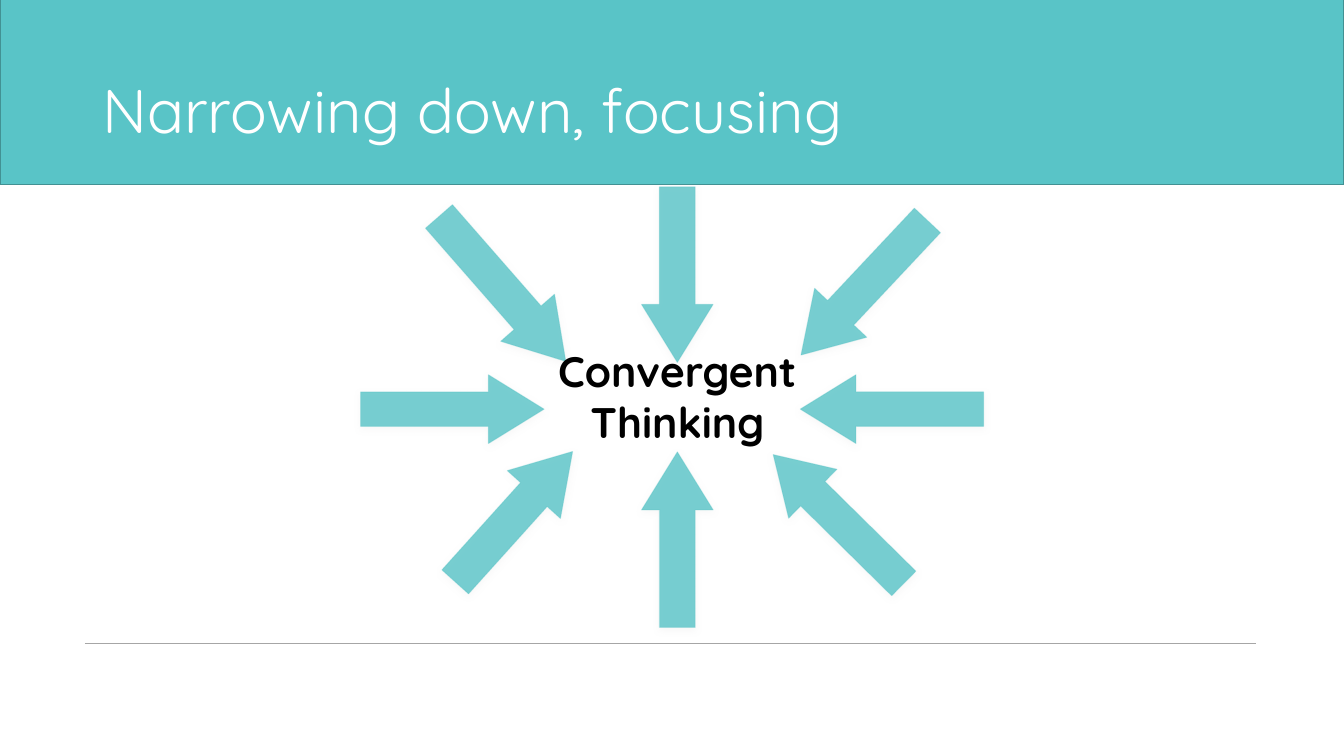
from pptx import Presentation
from pptx.dml.color import RGBColor
from pptx.enum.shapes import MSO_CONNECTOR, MSO_SHAPE
from pptx.enum.text import MSO_ANCHOR, PP_ALIGN
from pptx.oxml import parse_xml
from pptx.oxml.ns import nsdecls, qn
from pptx.util import Cm, Pt

RECTANGLE = MSO_SHAPE.RECTANGLE
LEFT_ARROW = MSO_SHAPE.LEFT_ARROW
STRAIGHT = MSO_CONNECTOR.STRAIGHT
MIDDLE, BOTTOM = MSO_ANCHOR.MIDDLE, MSO_ANCHOR.BOTTOM
LEFT, CENTER = PP_ALIGN.LEFT, PP_ALIGN.CENTER

FONT = "Quicksand"
TEAL = "59C4C7"
PAGE_WIDTH, PAGE_HEIGHT = 33.87, 19.05

# offset across, offset down, length, breadth, rotation
ARROWS = [
    (-4.41, -3.03, 4.85, 1.8, 228.8),
    (-5.67, 0, 4.62, 1.73, 180),
    (5.41, 0, 4.62, 1.73, 0),
    (0, -3.39, 4.42, 1.8, 270),
    (4.71, -3.06, 4.65, 1.8, 313.2),
    (-4.12, 2.71, 4.42, 1.8, 132),
    (0, 3.29, 4.42, 1.8, 90),
    (4.06, 2.77, 4.62, 1.73, 44.6),
]


def color(value):
    return RGBColor.from_string(value)


def set_opacity(fill, percent):
    choice = fill._xPr.find(qn("a:solidFill"))[0]
    choice.append(parse_xml(f'<a:alpha {nsdecls("a")} val="{percent * 1000}"/>'))


def add_shape(page, kind, box, fill, line, line_width):
    shape = page.shapes.add_shape(kind, *map(Cm, box))
    shape.shadow.inherit = False
    shape.fill.solid()
    shape.fill.fore_color.rgb = color(fill)
    shape.line.color.rgb = color(line)
    shape.line.width = Pt(line_width)
    return shape


def add_text(page, box, lines, size, text_color, anchor, align, bold=False, spacing=1.0):
    frame = page.shapes.add_textbox(*map(Cm, box)).text_frame
    frame.word_wrap = True
    frame.vertical_anchor = anchor
    frame.text = "\n".join(lines)
    for para in frame.paragraphs:
        para.alignment = align
        para.line_spacing = spacing
        para.font.name = FONT
        para.font.size = Pt(size)
        para.font.bold = bold
        para.font.color.rgb = color(text_color)


def add_header(page, box):
    left, top, width, height = box
    add_shape(page, RECTANGLE, box, TEAL, "429193", 1)
    title_box = (left + 2.33, top + 1.07, width - 4.66, height - 1.02)
    add_text(page, title_box, ["Narrowing down, focusing"], 44, "FFFFFF",
             MIDDLE, LEFT, spacing=0.9)


def add_footer_rule(page, box):
    left, top, width, height = box
    rule = page.shapes.add_connector(
        STRAIGHT, Cm(left), Cm(top), Cm(left + width), Cm(top + height))
    rule.line.color.rgb = color("A6A6A6")
    rule.line.width = Pt(0.5)
    rule._element.spPr.append(parse_xml(f'<a:effectLst {nsdecls("a")}/>'))


def add_arrow(page, center, length, breadth, rotation):
    across, down = center
    box = (across - length / 2, down - breadth / 2, length, breadth)
    arrow = add_shape(page, LEFT_ARROW, box, TEAL, TEAL, 0.75)
    arrow.rotation = rotation
    arrow.adjustments[0] = 0.5
    arrow.adjustments[1] = 0.81
    set_opacity(arrow.fill, 81)
    set_opacity(arrow.line.fill, 34)
    arrow._element.spPr.find(qn("a:effectLst")).append(parse_xml(
        f'<a:outerShdw {nsdecls("a")} blurRad="{Pt(5)}" dist="{Pt(1.8)}" '
        'dir="5400000" rotWithShape="0"><a:srgbClr val="E7E6E6">'
        '<a:alpha val="35000"/></a:srgbClr></a:outerShdw>'))


def add_convergence(page, box):
    left, top, width, height = box
    middle, center = left + width / 2, top + height / 2
    for across, down, length, breadth, rotation in ARROWS:
        add_arrow(page, (middle + across, center + down), length, breadth, rotation)
    label_box = (middle - 4.08, center - 1.65, 8.16, 2.74)
    add_text(page, label_box, ["Convergent", "Thinking"], 30.5, "000000",
             BOTTOM, CENTER, bold=True)


def main():
    deck = Presentation()
    deck.slide_width, deck.slide_height = Cm(PAGE_WIDTH), Cm(PAGE_HEIGHT)
    page = deck.slides.add_slide(deck.slide_layouts[6])
    add_footer_rule(page, (2.14, 16.21, 29.51, 0))
    add_header(page, (0, -0.05, PAGE_WIDTH, 4.7))
    add_convergence(page, (9.07, 4.71, 16, 11.2))
    deck.save("out.pptx")


if __name__ == "__main__":
    main()
